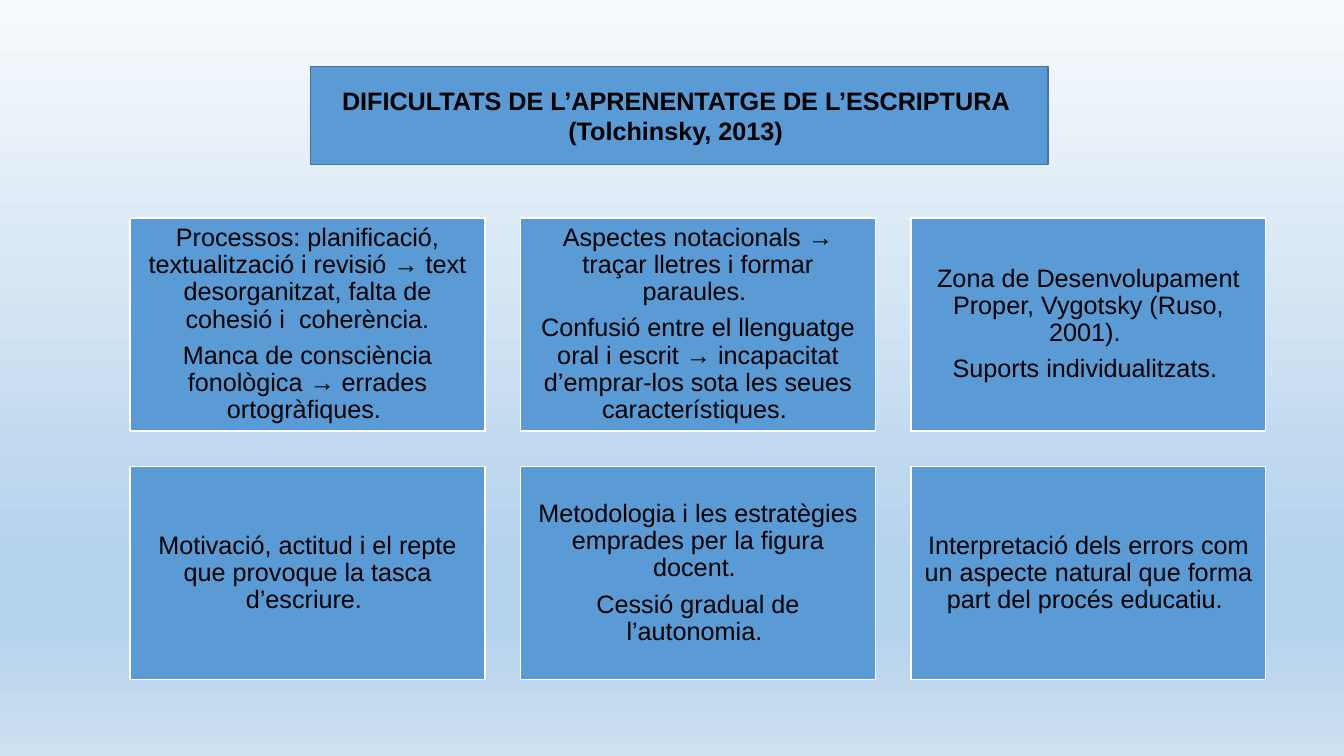
"""Build a slide on difficulties in learning to write: a title above a grid of six boxes."""
from copy import deepcopy

from pptx import Presentation
from pptx.dml.color import RGBColor as RGB
from pptx.enum.shapes import MSO_SHAPE as Preset
from pptx.enum.text import MSO_ANCHOR as Anchor, MSO_AUTO_SIZE as AutoSize, PP_ALIGN as Align
from pptx.util import Cm, Pt

TITLE = ["DIFICULTATS DE L’APRENENTATGE DE L’ESCRIPTURA ", "(Tolchinsky, 2013) "]
DIFFICULTIES = [
    ["Processos: planificació, textualització i revisió → text desorganitzat, "
     "falta de cohesió i  coherència.",
     "Manca de consciència fonològica → errades ortogràfiques. "],
    ["Aspectes notacionals → traçar lletres i formar paraules. ",
     "Confusió entre el llenguatge oral i escrit → incapacitat d’emprar-los "
     "sota les seues característiques. "],
    ["Zona de Desenvolupament Proper, Vygotsky (Ruso, 2001). ",
     "Suports individualitzats. "],
    ["Motivació, actitud i el repte que provoque la tasca d’escriure. "],
    ["Metodologia i les estratègies emprades per la figura docent. ",
     "Cessió gradual de l’autonomia. "],
    ["Interpretació dels errors com un aspecte natural que forma part "
     "del procés educatiu. "],
]

COLORS = {"box": "5B9BD5", "box_line": "FFFFFF", "title_line": "43739E", "text": "000000"}
BACKGROUND = [(0, "F7FAFD"), (0.74, "B5D2EC"), (0.83, "B5D2EC"), (1, "CEE1F2")]

COLUMNS = 3
GRID_LEFT, GRID_TOP = 3.28, 5.49
BOX_WIDTH, BOX_HEIGHT = 8.94, 5.37
GAP = 0.9

TITLE_PLACE = {"left": Cm(7.82), "top": Cm(1.68), "width": Cm(18.59), "height": Cm(2.46)}
FRAME = {"word_wrap": True, "auto_size": AutoSize.NONE, "vertical_anchor": Anchor.MIDDLE}
MARGINS = {f"margin_{side}": Cm(0.18) for side in ("left", "top", "right", "bottom")}
TITLE_PARAGRAPH = {"alignment": Align.CENTER, "line_spacing": 1.0}
BOX_PARAGRAPH = {"alignment": Align.CENTER, "line_spacing": 0.9, "space_after": Pt(6.3)}
FONT = {"name": "Arial", "size": Pt(18)}


def assign(target, values):
    for name, value in values.items():
        setattr(target, name, value)


def paint_background(slide):
    fill = slide.background.fill
    fill.gradient()
    fill.gradient_angle = 270
    stops = slide._element.xpath(".//a:gsLst")[0]
    for _ in range(len(BACKGROUND) - len(stops)):
        stops.append(deepcopy(stops[0]))
    for stop, (position, color) in zip(fill.gradient_stops, BACKGROUND):
        stop.position = position
        stop.color.rgb = RGB.from_string(color)


def fill_box(box, paragraphs, line, frame, paragraph_format, bold):
    box.fill.solid()
    box.fill.fore_color.rgb = RGB.from_string(COLORS["box"])
    box.line.color.rgb = RGB.from_string(COLORS[line])
    box.line.width = Pt(1)
    assign(box.text_frame, frame)
    box.text_frame.text = "\n".join(paragraphs)
    for paragraph in box.text_frame.paragraphs:
        assign(paragraph, paragraph_format)
        font = paragraph.runs[0].font
        assign(font, {**FONT, "bold": bold})
        font.color.rgb = RGB.from_string(COLORS["text"])


def main():
    deck = Presentation()
    assign(deck, {"slide_width": Cm(33.87), "slide_height": Cm(19.05)})
    slide = deck.slides.add_slide(deck.slide_layouts[5])
    paint_background(slide)

    for index, difficulty in enumerate(DIFFICULTIES):
        row, column = divmod(index, COLUMNS)
        left = GRID_LEFT + column * (BOX_WIDTH + GAP)
        top = GRID_TOP + row * (BOX_HEIGHT + GAP)
        box = slide.shapes.add_shape(
            Preset.RECTANGLE, Cm(left), Cm(top), Cm(BOX_WIDTH), Cm(BOX_HEIGHT))
        box.shadow.inherit = False
        fill_box(box, difficulty, "box_line", {**FRAME, **MARGINS}, BOX_PARAGRAPH, False)

    title = slide.shapes.title
    assign(title, TITLE_PLACE)
    fill_box(title, TITLE, "title_line", FRAME, TITLE_PARAGRAPH, True)

    deck.save("out.pptx")


if __name__ == "__main__":
    main()
